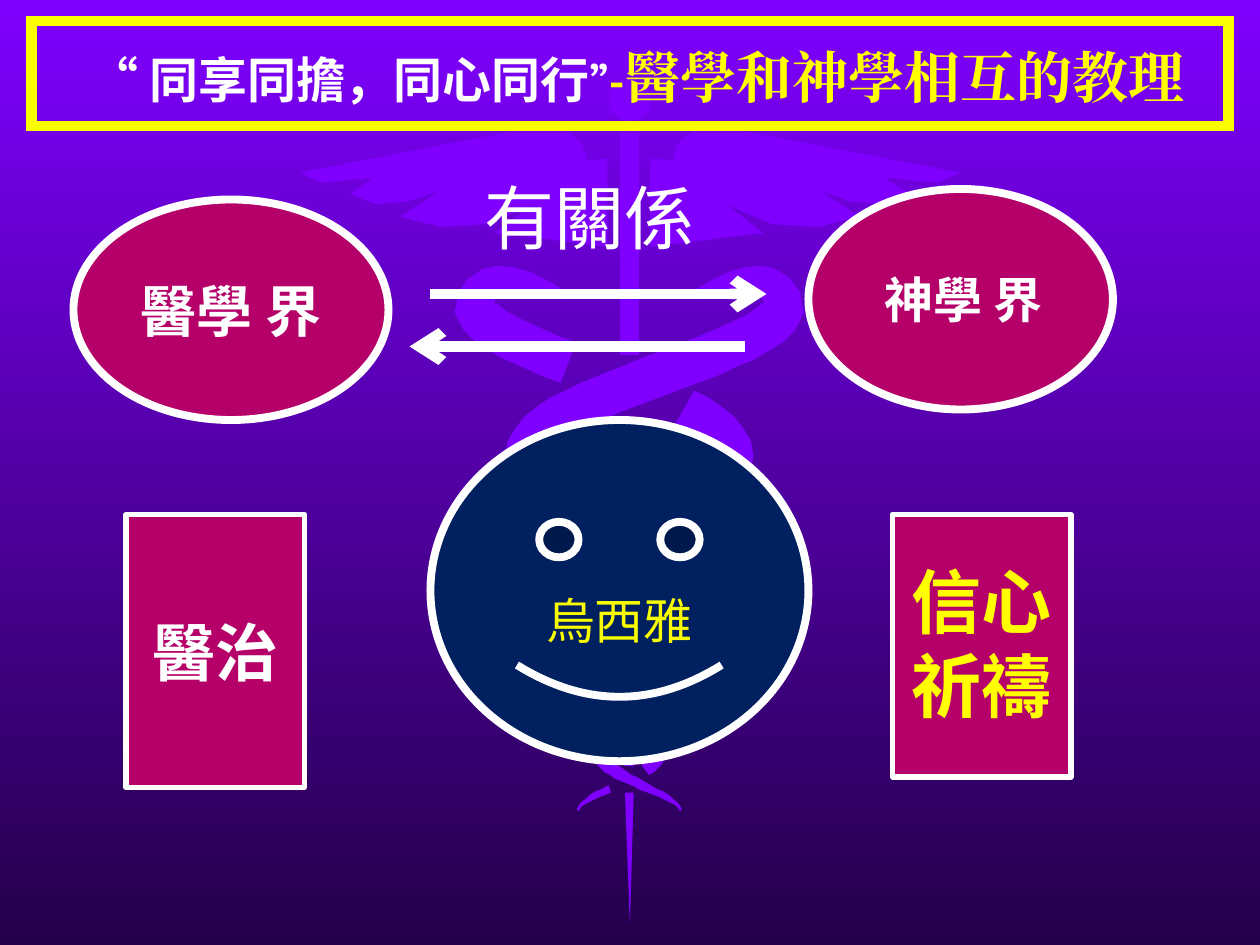
import math

import pptx
import pptx.dml.color
import pptx.enum.shapes
import pptx.enum.text
import pptx.oxml.ns
import pptx.util
from lxml import etree

COLORS = {
    "violet": "7F00FF",
    "night": "24004A",
    "magenta": "B50069",
    "navy": "002060",
    "lemon": "FAFD00",
    "yellow": "FFFF00",
    "white": "FFFFFF",
}
FONT = "Cambria"
COLUMNS, ROWS = 120, 90
FINE_COLUMNS = 1000
KINDS = pptx.enum.shapes.MSO_SHAPE
ALIGN = pptx.enum.text.PP_ALIGN

STAFF_X, STAFF_TOP, STAFF_TIP = 499.5, 102, 734
TURN_LEVELS = [245, 368, 451, 532, 594, 643]
TURN_REACHES = [122, 80, 61, 37, 21, 41]
TURN_WIDTHS = [34, 34, 27, 20, 15, 2]
CROSSINGS = range(len(TURN_LEVELS) - 1)
SNAKES_PASSING_UNDER = {1: {1, 2, 4}, -1: {0, 3}}
STEPS = 20
FEATHER_REACHES = [59, 70, 106]


def rgb(name):
    return pptx.dml.color.RGBColor.from_string(COLORS[name])


def between(values, index, share):
    return values[index] + (values[index + 1] - values[index]) * share


def staff_pieces():
    def half_width(y):
        return min(7.5, (STAFF_TIP - y) / 34)

    top = STAFF_TOP
    for index in CROSSINGS:
        middle = between(TURN_LEVELS, index, 0.5)
        gap = 6 + 0.55 * between(TURN_WIDTHS, index, 0.5)
        yield staff_piece(top, middle - gap, half_width)
        top = middle + gap
    yield staff_piece(top, STAFF_TIP, half_width)


def staff_piece(top, bottom, half_width):
    return [(STAFF_X + side * half_width(y), y)
            for side, y in ((-1, top), (1, top), (1, bottom), (-1, bottom))]


def snake_head(side):
    for step in range(8, 0, -1):
        turn = 0.36 * step / 8
        yield (STAFF_X + side * TURN_REACHES[0] * math.cos(math.pi * turn),
               TURN_LEVELS[0] - 24 * math.sin(math.pi * turn / 0.42),
               TURN_WIDTHS[0] - 3.2 * step)


def snake_pieces(side, passing_under):
    pieces = [list(snake_head(side))]
    for index in CROSSINGS:
        for step in range(STEPS + (index == CROSSINGS[-1])):
            share = step / STEPS
            if index in passing_under and 0.38 < share < 0.62:
                if pieces[-1]:
                    pieces.append([])
                continue
            swing = side * (-1) ** index * math.cos(math.pi * share)
            pieces[-1].append((STAFF_X + swing * between(TURN_REACHES, index, share),
                               between(TURN_LEVELS, index, share),
                               between(TURN_WIDTHS, index, share)))
    return map(ribbon, pieces)


def ribbon(spine):
    left, right = [], []
    for index, (x, y, width) in enumerate(spine):
        before, after = spine[max(index - 1, 0)], spine[min(index + 1, len(spine) - 1)]
        run, rise = after[0] - before[0], after[1] - before[1]
        scale = width / 2 / math.hypot(run, rise)
        left.append((x - rise * scale, y + run * scale))
        right.append((x + rise * scale, y - run * scale))
    return left + right[::-1]


def wing(side):
    shoulder = [(-17, 126), (-34, 127), (-38, 114), (-52, 102), (-71, 101), (-101, 106)]
    feathers = []
    for index, reach in enumerate(FEATHER_REACHES):
        x, y = 40 * index - 262, 137 + 17.5 * index
        feathers += [(x, y), (x + 0.3 * reach, y + 8),
                     (x + 0.65 * reach, y + 6), (x + reach, y + 4 - 7 * index)]
    root = [(-107, 185), (-88, 187), (-17, 196)]
    return [(STAFF_X - side * x, y) for x, y in shoulder + feathers + root]


def write(para, text, size=28, color="white", bold=True, east_asian=None):
    span = para.add_run()
    span.text = text
    span.font.name = FONT
    span.font.size = pptx.util.Pt(size)
    span.font.bold = bold
    span.font.color.rgb = rgb(color)
    if east_asian:
        etree.SubElement(span.font._element, pptx.oxml.ns.qn("a:ea"), typeface=east_asian)


class Painter:
    def __init__(self, deck):
        self.width, self.height = deck.slide_width, deck.slide_height
        self.page = deck.slides.add_slide(deck.slide_layouts[6])
        self.shapes = self.page.shapes

    def place(self, *grid):
        return [round(value * (self.height / ROWS if index % 2 else self.width / COLUMNS))
                for index, value in enumerate(grid)]

    def background(self, top, bottom):
        fill = self.page.background.fill
        fill.gradient()
        fill.gradient_angle = 270
        for stop, color, position in zip(fill.gradient_stops, (top, bottom), (0, 1)):
            stop.color.rgb = rgb(color)
            stop.position = position

    def paint(self, shape, fill=None, line=None, weight=0):
        shape.shadow.inherit = False
        if fill:
            shape.fill.solid()
            shape.fill.fore_color.rgb = rgb(fill)
        else:
            shape.fill.background()
        if line:
            shape.line.color.rgb = rgb(line)
            shape.line.width = pptx.util.Pt(weight)
        else:
            shape.line.fill.background()
        return shape

    def outline(self, points):
        builder = self.shapes.build_freeform(*points[0], scale=self.width / FINE_COLUMNS)
        builder.add_line_segments(points[1:], close=True)
        self.paint(builder.convert_to_shape(), "violet")

    def emblem(self):
        for piece in staff_pieces():
            self.outline(piece)
        for side, passing_under in SNAKES_PASSING_UNDER.items():
            self.outline(wing(side))
            for piece in snake_pieces(side, passing_under):
                self.outline(piece)
        self.shape(KINDS.OVAL, (58, 7.5, 4, 4), fill="violet", line=None)

    def shape(self, kind, grid, spans=(), fill="magenta", line="white", weight=4.5,
              align=ALIGN.CENTER, left=0.1, top=0.05, bottom=0.05):
        box = self.paint(self.shapes.add_shape(kind, *self.place(*grid)), fill, line, weight)
        frame = box.text_frame
        frame.word_wrap = True
        frame.vertical_anchor = pptx.enum.text.MSO_ANCHOR.MIDDLE
        frame.margin_left = pptx.util.Inches(left)
        frame.margin_top = pptx.util.Inches(top)
        frame.margin_bottom = pptx.util.Inches(bottom)
        para = frame.paragraphs[0]
        para.alignment = align
        for text, style in spans:
            write(para, text, **style)
        return box

    def label(self, grid, text, **style):
        box = self.shapes.add_textbox(*self.place(*grid))
        box.text_frame.word_wrap = False
        write(box.text_frame.paragraphs[0], text, **style)

    def arrow(self, *ends):
        arrow = self.shapes.add_connector(
            pptx.enum.shapes.MSO_CONNECTOR.STRAIGHT, *self.place(*ends))
        arrow.line.color.rgb = rgb("white")
        arrow.line.width = pptx.util.Pt(6)
        etree.SubElement(arrow.line._get_or_add_ln(),
                         pptx.oxml.ns.qn("a:tailEnd"), type="arrow")
        etree.SubElement(arrow._element.spPr, pptx.oxml.ns.qn("a:effectLst"))


def main():
    deck = pptx.Presentation()
    deck.slide_width, deck.slide_height = pptx.util.Inches(10), pptx.util.Inches(7.5)
    painter = Painter(deck)
    painter.background("violet", "night")
    painter.emblem()

    title = painter.shape(KINDS.RECTANGLE, (3, 2, 114, 10), [
        (" ", {"size": 36}),
        ("“ 同享同擔，同心同行", {}),
        ("”", {"east_asian": FONT}),
        ("-", {"color": "yellow"}),
        ("醫學和神學相互的教理", {"size": 32, "color": "yellow"}),
    ], fill=None, line="lemon", weight=6)
    etree.SubElement(title.line._get_or_add_ln(), pptx.oxml.ns.qn("a:miter"), lim="800000")

    painter.label((45, 16, 22.5, 9.25), "有關係", size=40, bold=False)
    painter.shape(KINDS.OVAL, (7, 19, 30, 21), [("醫學 界", {"size": 32})])
    painter.shape(KINDS.OVAL, (77, 18, 29, 21), [("神學 界", {})],
                  align=ALIGN.LEFT, left=0.25)
    painter.arrow(41, 28, 73, 28)
    painter.arrow(71, 33, 39, 33)
    painter.shape(KINDS.RECTANGLE, (12, 49, 17, 26), [("醫治", {"size": 36})], weight=3)
    painter.shape(KINDS.RECTANGLE, (85, 49, 17, 25),
                  [("信心 祈禱", {"size": 40, "color": "yellow"})], weight=3, bottom=0.1)
    painter.shape(KINDS.SMILEY_FACE, (41, 40, 36, 32.5),
                  [("烏西雅", {"color": "lemon", "bold": False})], fill="navy", top=0.52)
    deck.save("out.pptx")


if __name__ == "__main__":
    main()
